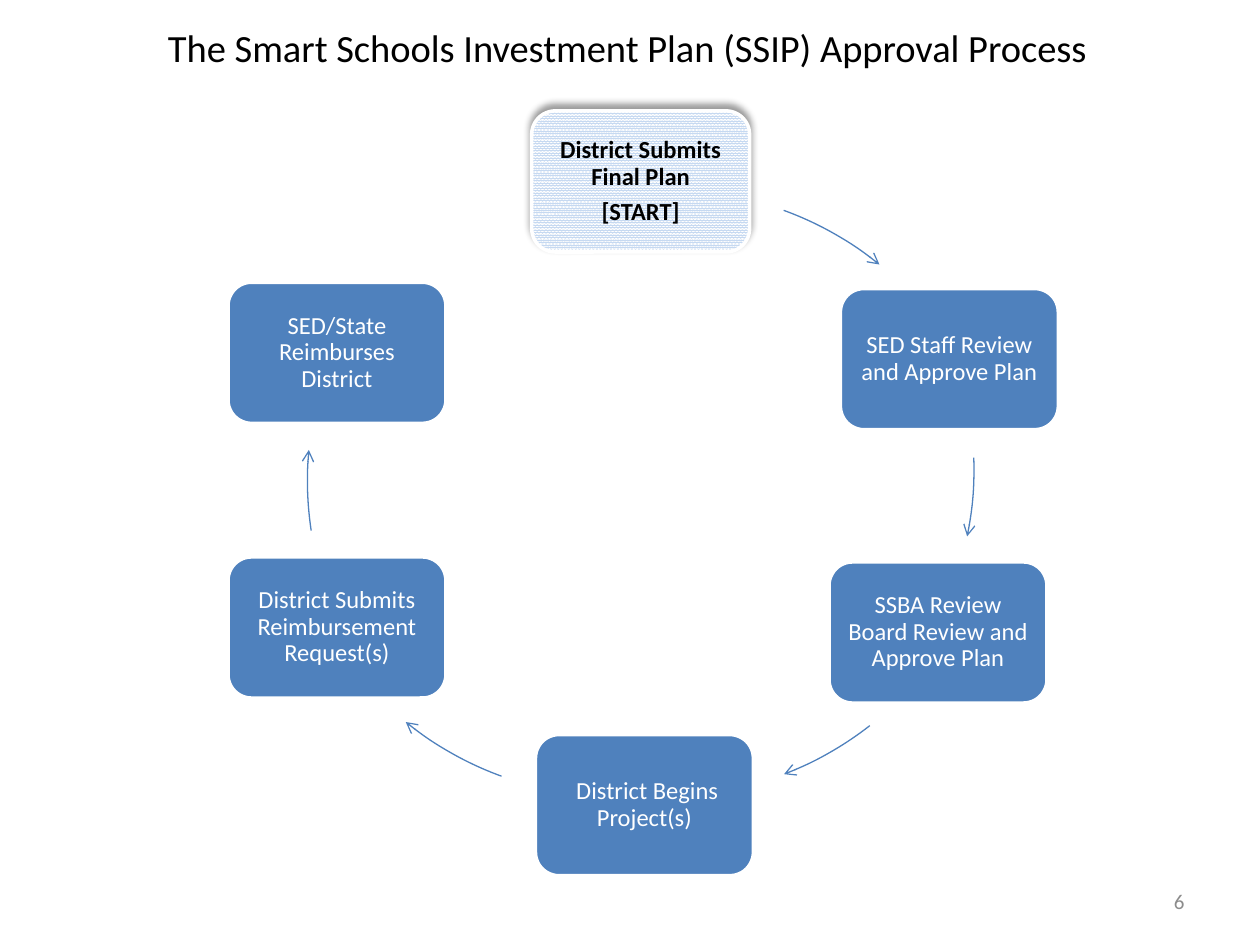
from lxml import etree
from pptx import Presentation
from pptx.dml.color import RGBColor
from pptx.enum.dml import MSO_PATTERN
from pptx.enum.shapes import MSO_SHAPE as Shp
from pptx.enum.text import MSO_ANCHOR, PP_ALIGN as Al
from pptx.oxml import parse_xml
from pptx.oxml.ns import nsdecls, qn
from pptx.util import Inches as In, Pt

WIDE, HIGH = 10, 7.5
BLUE = RGBColor(0x4F, 0x81, 0xBD)
PALE = RGBColor(0xC6, 0xD9, 0xF1)
WHITE = RGBColor(0xFF, 0xFF, 0xFF)
BLACK = RGBColor(0, 0, 0)
GRAY = RGBColor(0x8C, 0x8C, 0x8C)

# Content: each step has its left, top and paragraphs
TITLE = "The Smart Schools Investment Plan (SSIP) Approval Process"
NUMBER = "6"
START = (4.22, 0.88, ["District Submits Final Plan", "[START]"])
STEPS = [
    (6.67, 2.29, ["SED Staff Review and Approve Plan"]),
    (6.58, 4.46, ["SSBA Review Board Review and Approve Plan"]),
    (4.25, 5.83, [" District Begins Project(s)"]),
    (1.81, 4.42, ["District Submits Reimbursement Request(s)"]),
    (1.81, 2.24, ["SED/State Reimburses District"]),
]
# Arrows along circles: left and top of the circle, first and last angle
ARCS = [
    (2.67, 1.51, 290, 309),
    (2.44, 1.08, 358, 11.6),
    (2.63, 1.03, 52, 69),
    (2.24, 1.03, 110, 129),
    (2.44, 1.17, 171.4, 185.3),
]
BOX_W, BOX_H, PAD = 1.73, 1.12, 0.06
RING = 5.29
DEGREE = 0.6  # one degree as an adjustment value

deck = Presentation()
deck.slide_width, deck.slide_height = In(WIDE), In(HIGH)
slide = deck.slides.add_slide(deck.slide_layouts[6])
shapes = slide.shapes


def write(shape, lines, align, look, para=None):
    frame = shape.text_frame
    frame.word_wrap = True
    frame.vertical_anchor = MSO_ANCHOR.MIDDLE
    for i, line in enumerate(lines):
        p = frame.paragraphs[0] if i == 0 else frame.add_paragraph()
        p.text, p.alignment = line, align
        for key, val in (para or {}).items():
            setattr(p, key, val)
        font = p.runs[0].font
        font.name = "Calibri"
        font.color.rgb = look["color"]
        font.size = Pt(look["size"])
        font.bold = look.get("bold", False)
    return frame


def step(left, top, lines, color=WHITE, bold=False):
    box = shapes.add_shape(Shp.ROUNDED_RECTANGLE,
                           In(left), In(top), In(BOX_W), In(BOX_H))
    box.shadow.inherit = False
    box.fill.solid()
    box.fill.fore_color.rgb = BLUE
    box.line.color.rgb, box.line.width = WHITE, Pt(2)
    frame = write(box, lines, Al.CENTER,
                  {"size": 14, "color": color, "bold": bold},
                  {"line_spacing": 0.9, "space_after": Pt(4.9)})
    for side in ("left", "top", "right", "bottom"):
        setattr(frame, f"margin_{side}", In(PAD))
    return box


def arc(left, top, first, last):
    curve = shapes.add_shape(Shp.ARC, In(left), In(top), In(RING), In(RING))
    curve.adjustments[0] = first * DEGREE
    curve.adjustments[1] = last * DEGREE
    curve.shadow.inherit = False
    curve.fill.background()
    curve.line.color.rgb, curve.line.width = BLUE, Pt(0.75)
    etree.SubElement(curve.line._get_or_add_ln(), qn("a:tailEnd"), type="arrow")


def label(left, top, wide, high, text, align, **look):
    box = shapes.add_textbox(In(left), In(top), In(wide), In(high))
    write(box, [text], align, look)


# Start box: patterned, with a soft shadow above
first = step(*START, color=BLACK, bold=True)
first.fill.patterned()
first.fill.pattern = MSO_PATTERN.PERCENT_90
first.fill.fore_color.rgb, first.fill.back_color.rgb = PALE, WHITE
effects = first._element.spPr.find(qn("a:effectLst"))
effects.append(parse_xml(
    f'<a:outerShdw {nsdecls("a")} blurRad="{Pt(4)}" dist="{Pt(3)}" '
    'dir="16200000" rotWithShape="0"><a:srgbClr val="000000">'
    '<a:alpha val="40000"/></a:srgbClr></a:outerShdw>'))

# Cycle
for item in STEPS:
    step(*item)
for item in ARCS:
    arc(*item)

# Title and page number
label(0.23, 0.08, 9.5, 0.58, TITLE, Al.CENTER, size=22, color=BLACK)
label(7.17, 6.95, 2.33, 0.4, NUMBER, Al.RIGHT, size=12, color=GRAY)

deck.save("out.pptx")
